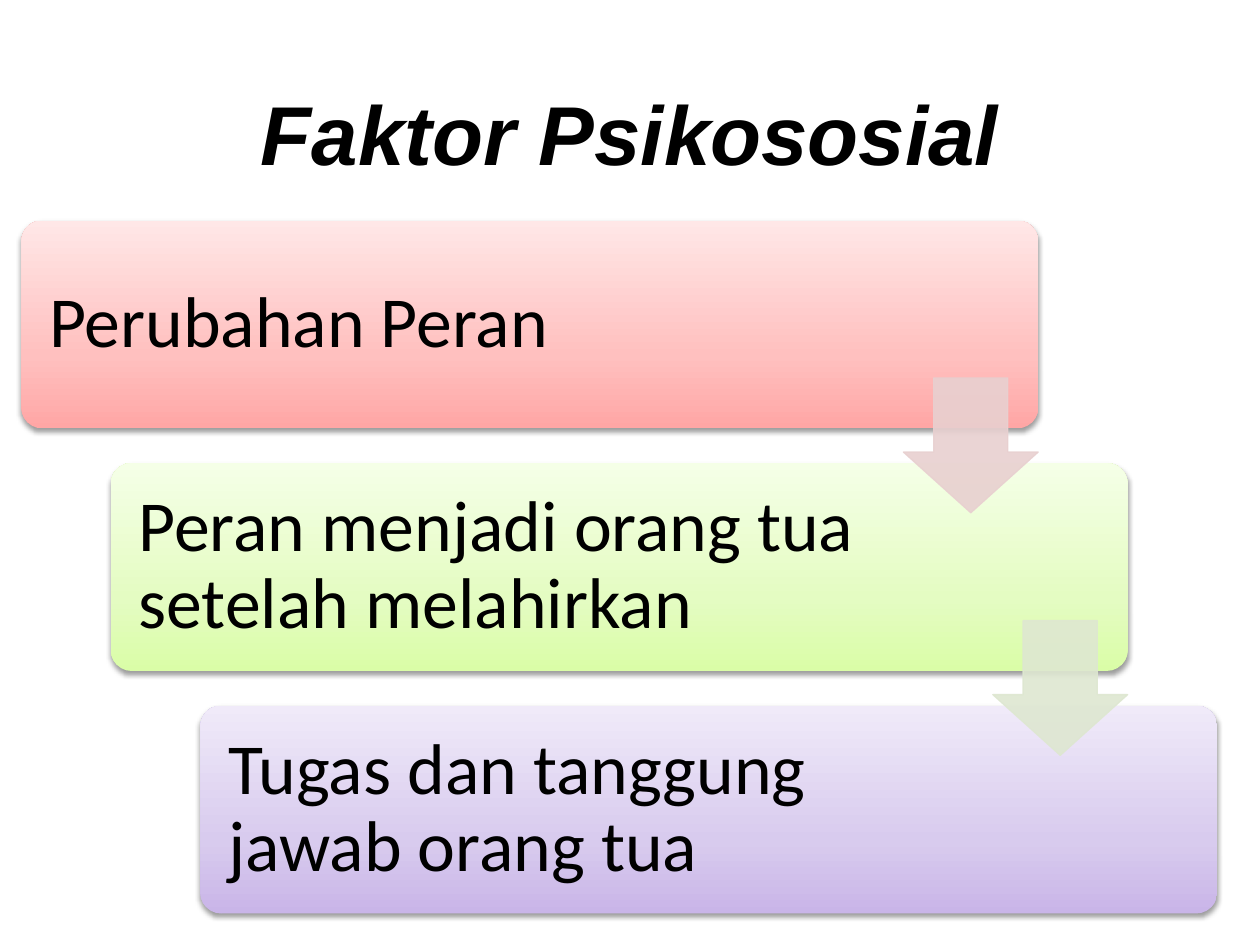
import pptx
import pptx.dml.color
import pptx.enum.shapes
import pptx.enum.text
import pptx.oxml
import pptx.oxml.ns
import pptx.util
from pptx.util import Inches

SHAPE = pptx.enum.shapes.MSO_SHAPE
ALIGN = pptx.enum.text.PP_ALIGN
MIDDLE = pptx.enum.text.MSO_ANCHOR.MIDDLE
NS = pptx.oxml.ns.nsdecls("a")
qn = pptx.oxml.ns.qn

# Text, text box width, gradient colours from bottom to top
STEPS = [
    ("Perubahan Peran", 6.29, ("FFA6A5", "FFC0BF", "FFE7E7")),
    ("Peran menjadi orang tua setelah melahirkan", 6.19,
     ("DAFDA7", "E4FCC2", "F5FFE7")),
    ("Tugas dan tanggung jawab orang tua", 6.19,
     ("C9B5E8", "D8CBEE", "F0EAF9")),
]
ARROW_COLORS = ["E8D0D0", "DEE7D1"]
LEFT, TOP = 0.17, 1.75
STEP_X, STEP_Y = 0.71, 1.925
CARD_W, CARD_H = 8.07, 1.65
ARROW = 1.07


def rgb(color):
    return pptx.dml.color.RGBColor.from_string(color)


def add_run(p, text, font, size, bold=None, italic=None):
    r = p.add_run()
    r.text = text
    r.font.name = font
    r.font.size = pptx.util.Pt(size)
    r.font.bold = bold
    r.font.italic = italic
    r.font.color.rgb = rgb("000000")


def set_title(slide, text):
    sp = slide.shapes.title
    sp.left, sp.top, sp.width, sp.height = map(Inches, (0.5, 0.3, 9, 1.25))
    tf = sp.text_frame
    tf.vertical_anchor = MIDDLE
    tf.margin_top = Inches(0.3)
    p = tf.paragraphs[0]
    p.alignment = ALIGN.CENTER
    add_run(p, text, "Arial", 47.7, bold=True, italic=True)


def add_card(slide, x, y, colors):
    sp = slide.shapes.add_shape(SHAPE.ROUNDED_RECTANGLE, Inches(x), Inches(y),
                                Inches(CARD_W), Inches(CARD_H))
    sp.adjustments[0] = 0.1
    sp.line.fill.background()
    sp.shadow.inherit = False
    # Three-stop gradient, running upwards
    stops = "".join(
        f'<a:gs pos="{pos * 1000}"><a:srgbClr val="{color}"/></a:gs>'
        for pos, color in zip((0, 35, 100), colors))
    sp_pr = sp._element.spPr
    sp_pr.find(qn("a:prstGeom")).addnext(pptx.oxml.parse_xml(
        f'<a:gradFill {NS} rotWithShape="1"><a:gsLst>{stops}</a:gsLst>'
        '<a:lin ang="16200000" scaled="0"/></a:gradFill>'))
    # Soft shadow below the card
    sp_pr.find(qn("a:effectLst")).append(pptx.oxml.parse_xml(
        f'<a:outerShdw {NS} blurRad="{pptx.util.Pt(3.1)}" '
        f'dist="{pptx.util.Pt(1.6)}" dir="5400000" rotWithShape="0">'
        '<a:srgbClr val="000000"><a:alpha val="38000"/></a:srgbClr>'
        '</a:outerShdw>'))


def add_label(slide, x, y, width, text):
    sp = slide.shapes.add_textbox(Inches(x), Inches(y), Inches(width),
                                  Inches(CARD_H - 0.1))
    tf = sp.text_frame
    tf.word_wrap = True
    tf.vertical_anchor = MIDDLE
    tf.margin_left = tf.margin_right = Inches(0.17)
    tf.margin_top = tf.margin_bottom = Inches(0.17)
    p = tf.paragraphs[0]
    p.line_spacing = 0.9
    add_run(p, text, "Calibri", 41)


def add_arrow(slide, x, y, color):
    sp = slide.shapes.add_shape(SHAPE.DOWN_ARROW, Inches(x), Inches(y),
                                Inches(ARROW), Inches(ARROW))
    sp.adjustments[0] = 0.55
    sp.adjustments[1] = 0.45
    sp.shadow.inherit = False
    sp.line.width = pptx.util.Pt(0.75)
    for fill in (sp.fill, sp.line.fill):
        fill.solid()
        fill.fore_color.rgb = rgb(color)
    # Fill and outline are slightly transparent
    for clr in sp._element.spPr.iter(qn("a:srgbClr")):
        clr.append(pptx.oxml.parse_xml(f'<a:alpha {NS} val="90000"/>'))


def main():
    prs = pptx.Presentation()
    prs.slide_width, prs.slide_height = Inches(10), Inches(7.5)
    slide = prs.slides.add_slide(prs.slide_layouts[5])
    set_title(slide, "Faktor Psikososial")

    # Staircase of cards
    for i, (text, width, colors) in enumerate(STEPS):
        x, y = LEFT + i * STEP_X, TOP + i * STEP_Y
        add_card(slide, x, y, colors)
        add_label(slide, x + 0.05, y + 0.05, width, text)

    # Arrows, flush with the right edge of the card they leave
    for i, color in enumerate(ARROW_COLORS):
        add_arrow(slide, LEFT + CARD_W - ARROW + i * STEP_X,
                  TOP + 1.25 + i * STEP_Y, color)

    prs.save("out.pptx")


if __name__ == "__main__":
    main()
